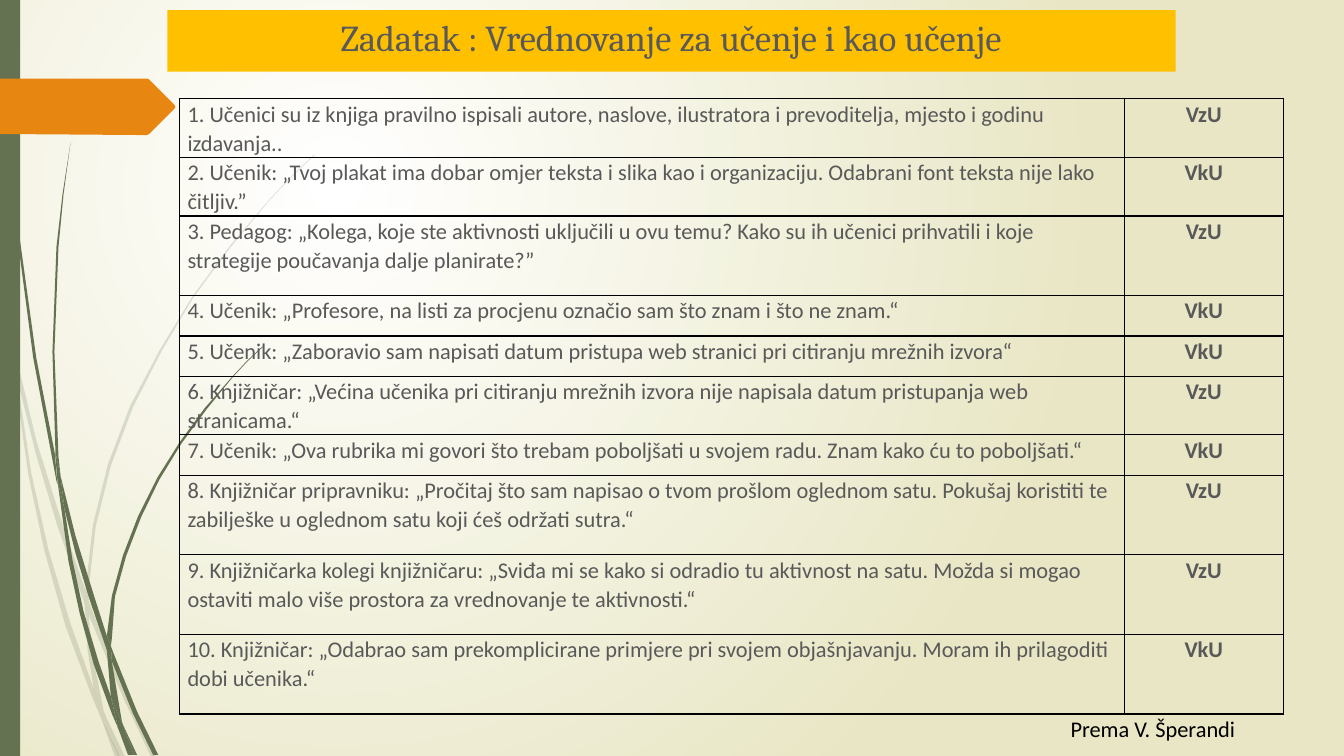
from dataclasses import dataclass

from lxml.etree import SubElement
from pptx import Presentation
from pptx.dml.color import RGBColor
from pptx.enum.shapes import MSO_SHAPE as Shape
from pptx.enum.text import MSO_ANCHOR as Anchor, MSO_AUTO_SIZE as AutoSize, PP_ALIGN as Align
from pptx.oxml.ns import qn
from pptx.util import Inches, Pt

COLS, ROWS = 13.33, 7.5  # the grid has one-inch cells
TITLE_ONLY = 5


@dataclass(frozen=True)
class Theme:
    leaf: str = "647252"
    arrow: str = "E78712"
    banner: str = "FFC000"
    ink: str = "595959"
    black: str = "000000"
    glow: str = "FFFFFF"
    paper: str = "E8E6C4"
    title_font: str = "Cambria"
    body_font: str = "Calibri"
    title_size: int = 26
    body_size: int = 16


THEME = Theme()

# Sections of the grass blades, as (column, row) corners.
PALE_BLADES = [
    [(.11, 3.5), (.09, 3.22), (0, 2.82), (0, 2.99), (.1, 3.44)],
    [(.57, 5.22), (.84, 5.99), (.85, 5.86), (.62, 5.2), (.36, 4.37), (.14, 3.45),
     (.17, 3.76), (.36, 4.52)],
    [(.92, 6.07), (.88, 5.96), (.88, 6.1), (1.23, 6.94), (1.5, 7.51), (1.55, 7.51), (1.27, 6.92)],
    [(1.19, 7.51), (1.24, 7.51), (1.05, 7.11)],
    [(.93, 6.83), (.7, 6.19), (.48, 5.45), (.31, 4.69), (.17, 3.76), (.11, 3.5), (.28, 4.7),
     (.44, 5.46), (.65, 6.21), (.92, 6.93), (1.01, 7.14), (.99, 7.07)],
    [(.84, 5.99), (.87, 6.46), (.93, 6.83), (.96, 6.92), (1.05, 7.11), (1.03, 7.06),
     (.91, 6.46), (.88, 6.1), (.88, 6.08)],
    [(.88, 5.84), (.95, 5.22), (1.1, 4.62), (1.32, 4.04), (1.6, 3.49), (1.92, 2.95), (2.29, 2.45),
     (2.68, 1.98), (2.9, 1.75), (3.12, 1.54), (3.12, 1.53), (2.89, 1.75), (2.68, 1.97),
     (2.28, 2.44), (1.91, 2.94), (1.58, 3.48), (1.29, 4.03), (1.07, 4.61), (.92, 5.22),
     (.85, 5.84), (.85, 5.86), (.88, 5.96)],
    [(1.01, 7.14), (1.14, 7.51), (1.19, 7.51)],
    [(.88, 6.08), (.88, 6.1), (.88, 5.96), (.85, 5.86), (.84, 5.99)],
    [(.96, 6.92), (.93, 6.83), (.99, 7.07), (1.01, 7.14), (1.18, 7.51), (1.19, 7.51), (1.05, 7.11)],
]
DARK_BLADES = [
    [(.07, 1.1), (.17, 2.33), (.33, 3.55), (.56, 4.77), (.57, 4.81), (.55, 4.57), (.55, 4.53),
     (.36, 3.55), (.19, 2.32), (.08, 1.09), (.05, .48), (.04, 0), (.03, 0), (.04, .48)],
    [(.88, 5.92), (1.06, 6.45), (1.06, 6.33), (1.06, 6.31), (.93, 5.9), (.75, 5.32), (.6, 4.72),
     (.64, 5.05), (.75, 5.49)],
    [(1.13, 6.49), (1.1, 6.41), (1.11, 6.56), (1.32, 7.08), (1.52, 7.49), (1.57, 7.49), (1.36, 7.06)],
    [(1.1, 6.91), (.98, 6.57), (.83, 6.07), (.72, 5.56), (.64, 5.05), (.57, 4.77), (.68, 5.57),
     (.79, 6.08), (.93, 6.59), (1.11, 7.08), (1.17, 7.22), (1.16, 7.17)],
    [(.6, 4.72), (.58, 4.53), (.54, 3.49), (.58, 2.45), (.63, 1.93), (.7, 1.41), (.62, 1.93),
     (.56, 2.45), (.52, 3.49), (.55, 4.49)],
    [(1.33, 7.49), (1.36, 7.49), (1.22, 7.19)],
    [(.57, 4.77), (.64, 5.05), (.6, 4.72), (.55, 4.49), (.55, 4.53)],
    [(1.11, 6.33), (1.14, 5.92), (1.25, 5.52), (1.4, 5.13), (1.58, 4.76), (1.8, 4.4), (2.05, 4.06),
     (2.31, 3.74), (2.45, 3.59), (2.61, 3.44), (2.6, 3.44), (2.45, 3.58), (2.31, 3.73),
     (2.03, 4.05), (1.78, 4.39), (1.56, 4.74), (1.37, 5.12), (1.22, 5.51), (1.11, 5.91),
     (1.06, 6.31), (1.1, 6.41)],
    [(1.17, 7.22), (1.27, 7.49), (1.31, 7.49)],
    [(1.06, 6.45), (1.1, 6.91), (1.16, 7.06), (1.22, 7.19), (1.21, 7.16), (1.11, 6.56), (1.09, 6.51)],
    [(1.06, 6.45), (1.09, 6.51), (1.11, 6.56), (1.1, 6.41), (1.06, 6.31)],
    [(1.16, 7.06), (1.1, 6.91), (1.16, 7.17), (1.17, 7.22), (1.3, 7.49), (1.33, 7.49), (1.22, 7.19)],
]

ARROW = [(1.73, 1.08), (1.48, 1.33), (1.46, 1.34), (1.36, 1.34), (0, 1.33), (0, .78),
         (1.36, .78), (1.46, .78), (1.48, .79), (1.73, 1.04), (1.74, 1.06)]

# Row heights
ONE_LINE, TIGHT, ROOMY = .4, .57, .79
STATEMENTS = [
    (TIGHT, "VzU", "1. Učenici su iz knjiga pravilno ispisali autore, naslove, ilustratora i "
     "prevoditelja, mjesto i godinu izdavanja.."),
    (TIGHT, "VkU", "2. Učenik: „Tvoj plakat ima dobar omjer teksta i slika kao i organizaciju. "
     "Odabrani font teksta nije lako čitljiv.”"),
    (ROOMY, "VzU", "3. Pedagog: „Kolega, koje ste aktivnosti uključili u ovu temu? Kako su ih "
     "učenici prihvatili i koje strategije poučavanja dalje planirate?”"),
    (ONE_LINE, "VkU", "4. Učenik: „Profesore, na listi za procjenu označio sam što znam i što ne znam.“"),
    (ONE_LINE, "VkU", "5. Učenik: „Zaboravio sam napisati datum pristupa web stranici pri "
     "citiranju mrežnih izvora“"),
    (TIGHT, "VzU", "6. Knjižničar: „Većina učenika pri citiranju mrežnih izvora nije napisala "
     "datum pristupanja web stranicama.“"),
    (ONE_LINE, "VkU", "7. Učenik: „Ova rubrika mi govori što trebam poboljšati u svojem radu. "
     "Znam kako ću to poboljšati.“"),
    (ROOMY, "VzU", "8. Knjižničar pripravniku: „Pročitaj što sam napisao o tvom prošlom oglednom "
     "satu. Pokušaj koristiti te zabilješke u oglednom satu koji ćeš održati sutra.“"),
    (ROOMY, "VzU", "9. Knjižničarka kolegi knjižničaru: „Sviđa mi se kako si odradio tu aktivnost "
     "na satu. Možda si mogao ostaviti malo više prostora za vrednovanje te aktivnosti.“"),
    (ROOMY, "VkU", "10. Knjižničar: „Odabrao sam prekomplicirane primjere pri svojem "
     "objašnjavanju. Moram ih prilagoditi dobi učenika.“"),
]


def grid(*cells):
    return [Inches(cell) for cell in cells]


def paint(shape, color, alpha=None):
    shape.shadow.inherit = False
    shape.line.fill.background()
    shape.fill.solid()
    shape.fill.fore_color.rgb = RGBColor.from_string(color)
    if alpha is not None:
        tint = shape.fill._xPr.find(".//" + qn("a:srgbClr"))
        SubElement(tint, qn("a:alpha"), val=str(alpha * 1000))


def write(frame, text, color, size, font, align=Align.LEFT, bold=False):
    frame.word_wrap = True
    paragraph = frame.paragraphs[0]
    paragraph.text = text
    paragraph.alignment = align
    paragraph.font.name = font
    paragraph.font.size = Pt(size)
    paragraph.font.bold = bold
    paragraph.font.color.rgb = RGBColor.from_string(color)
    return paragraph


def add_outline(slide, corners, color, alpha=None):
    start, *rest = [grid(*corner) for corner in corners]
    builder = slide.shapes.build_freeform(*start, scale=1.0)
    builder.add_line_segments(rest, close=True)
    paint(builder.convert_to_shape(), color, alpha)


def set_background(slide):
    fill = slide.background.fill
    fill.gradient()
    for stop, position, color in zip(fill.gradient_stops, (0, 1), (THEME.glow, THEME.paper)):
        stop.position = position
        stop.color.rgb = RGBColor.from_string(color)
    gradient = slide._element.find(".//" + qn("a:gradFill"))
    gradient.remove(gradient.find(qn("a:lin")))
    circle = SubElement(gradient, qn("a:path"), {"path": "circle"})
    SubElement(circle, qn("a:fillToRect"), l="50000", t="50000", r="100000", b="100000")


def set_title(slide, text):
    title = slide.shapes.title
    title.left, title.top, title.width, title.height = grid(1.66, .1, 10, .61)
    title.fill.solid()
    title.fill.fore_color.rgb = RGBColor.from_string(THEME.banner)
    title.text_frame.auto_size = AutoSize.NONE
    title.text_frame.vertical_anchor = Anchor.TOP
    write(title.text_frame, text, THEME.ink, THEME.title_size, THEME.title_font, Align.CENTER)


def set_borders(cell):
    properties = cell._tc.get_or_add_tcPr()
    for position, side in enumerate(("a:lnL", "a:lnR", "a:lnT", "a:lnB")):
        border = SubElement(properties, qn(side), w=str(Pt(1)))
        SubElement(SubElement(border, qn("a:solidFill")), qn("a:srgbClr"), val=THEME.black)
        properties.insert(position, border)


def fill_cell(cell, text, align, bold):
    cell.margin_left = cell.margin_right = Inches(.08)
    cell.margin_top = cell.margin_bottom = 0
    cell.fill.background()
    set_borders(cell)
    paragraph = write(cell.text_frame, text, THEME.ink, THEME.body_size,
                      THEME.body_font, align, bold)
    paragraph.line_spacing = 1.07


def add_statements(slide):
    widths = (9.37, 1.58)
    height = sum(row_height for row_height, _, _ in STATEMENTS)
    table = slide.shapes.add_table(
        len(STATEMENTS), len(widths), *grid(1.78, .98, sum(widths), height)).table
    table.first_row = table.horz_banding = False
    for column, width in zip(table.columns, widths):
        column.width = Inches(width)
    for row, (row_height, kind, statement) in zip(table.rows, STATEMENTS):
        row.height = Inches(row_height)
        fill_cell(row.cells[0], statement, Align.LEFT, False)
        fill_cell(row.cells[1], kind, Align.CENTER, True)


def add_credit(slide, text):
    credit = slide.shapes.add_textbox(*grid(10.52, 7.05, 2.44, .37)).text_frame
    credit.auto_size = AutoSize.SHAPE_TO_FIT_TEXT
    write(credit, text, THEME.black, THEME.body_size, THEME.body_font)


def main():
    deck = Presentation()
    deck.slide_width, deck.slide_height = grid(COLS, ROWS)
    slide = deck.slides.add_slide(deck.slide_layouts[TITLE_ONLY])
    set_background(slide)
    for blades, alpha in ((PALE_BLADES, 20), (DARK_BLADES, None)):
        for section in blades:
            add_outline(slide, section, THEME.leaf, alpha)
    paint(slide.shapes.add_shape(Shape.RECTANGLE, *grid(0, 0, .2, ROWS)), THEME.leaf)
    add_outline(slide, ARROW, THEME.arrow)
    set_title(slide, "Zadatak : Vrednovanje za učenje i kao učenje")
    add_statements(slide)
    add_credit(slide, "Prema V. Šperandi")
    deck.save("out.pptx")


if __name__ == "__main__":
    main()
